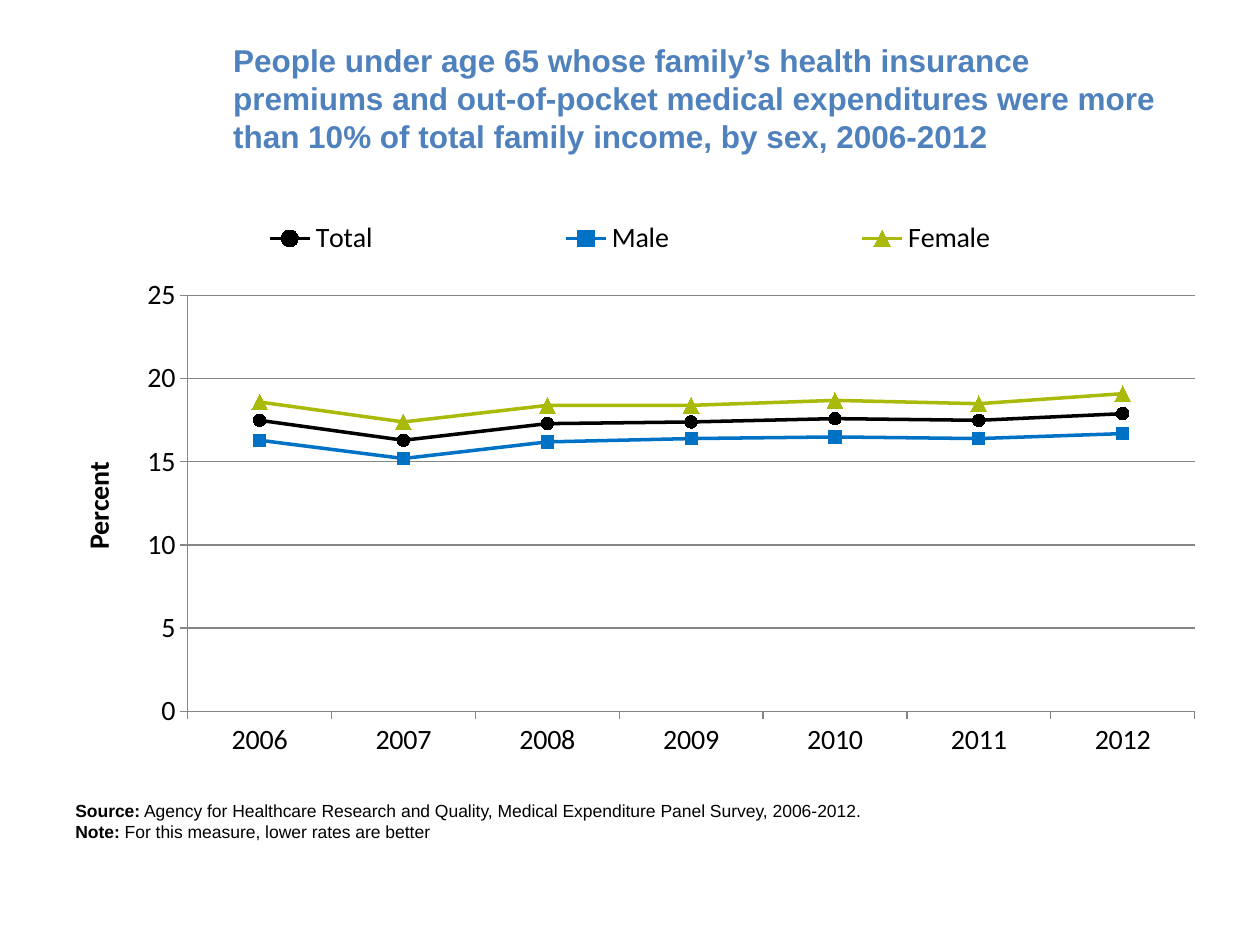
from lxml.etree import SubElement
from pptx import Presentation
from pptx.chart.data import CategoryChartData
from pptx.dml.color import RGBColor
from pptx.enum.chart import XL_CHART_TYPE, XL_LEGEND_POSITION, XL_MARKER_STYLE, XL_TICK_MARK
from pptx.enum.text import MSO_ANCHOR, PP_ALIGN
from pptx.oxml.ns import qn
from pptx.util import Pt

TITLE_BLUE = RGBColor(0x4F, 0x81, 0xBD)
BLACK = RGBColor(0, 0, 0)
BLUE = RGBColor(0x00, 0x72, 0xC6)
GREEN = RGBColor(0xAA, 0xBA, 0x0A)
GRAY = RGBColor(0x86, 0x86, 0x86)


def add_text(para, text, size=10, bold=False, color=BLACK, name="Arial"):
    span = para.add_run()
    span.text = text
    span.font.size = Pt(size)
    span.font.bold = bold
    span.font.name = name
    span.font.color.rgb = color


def place(parent, **position):
    """Give a chart part a manual layout, in fractions of the chart."""
    for old in parent.findall(qn("c:layout")):
        parent.remove(old)
    layout = SubElement(parent, qn("c:layout"))
    manual = SubElement(layout, qn("c:manualLayout"))
    for key, value in position.items():
        SubElement(manual, qn(f"c:{key}")).set("val", str(value))
    # The layout follows the first child, except in a plot area, where it leads
    parent.insert(0 if parent.tag == qn("c:plotArea") else 1, layout)


deck = Presentation()
deck.slide_width, deck.slide_height = Pt(720), Pt(540)
page = deck.slides.add_slide(deck.slide_layouts[5])

# Title
title = page.shapes.title
title.left, title.top, title.width, title.height = Pt(126), Pt(21.6), Pt(558), Pt(68.4)
title.text_frame.word_wrap = True
title.text_frame.vertical_anchor = MSO_ANCHOR.MIDDLE
para = title.text_frame.paragraphs[0]
para.alignment = PP_ALIGN.LEFT
add_text(para, "People under age 65 whose family’s health insurance premiums and "
         "out-of-pocket medical expenditures were more than 10% of total family "
         "income, by sex, 2006-2012", size=18, bold=True, color=TITLE_BLUE)

# Line chart
lines = [
    ("Total", (17.5, 16.3, 17.3, 17.4, 17.6, 17.5, 17.9), BLACK, XL_MARKER_STYLE.CIRCLE, 7),
    ("Male", (16.3, 15.2, 16.2, 16.4, 16.5, 16.4, 16.7), BLUE, XL_MARKER_STYLE.SQUARE, 7),
    ("Female", (18.6, 17.4, 18.4, 18.4, 18.7, 18.5, 19.1), GREEN, XL_MARKER_STYLE.TRIANGLE, 9),
]
data = CategoryChartData()
data.categories = [str(year) for year in range(2006, 2013)]
for name, values, *_ in lines:
    data.add_series(name, values)
chart = page.shapes.add_chart(XL_CHART_TYPE.LINE_MARKERS, Pt(36), Pt(115.2),
                              Pt(648), Pt(324), data).chart
chart.has_title = False
chart.font.size = Pt(10)
chart.font.name = "Arial"
chart.font.color.rgb = BLACK
plot = chart.plots[0]
plot.vary_by_categories = False
place(chart._chartSpace.chart.plotArea, layoutTarget="inner", xMode="edge", yMode="edge",
      x=0.11, y=0.166, w=0.888, h=0.733)

for series, (_, _, color, style, size) in zip(plot.series, lines):
    series.smooth = False
    series.format.line.color.rgb = color
    series.format.line.width = Pt(2)
    marker = series.marker
    marker.style, marker.size = style, size
    marker.format.fill.solid()
    marker.format.fill.fore_color.rgb = color
    marker.format.line.color.rgb = color

# Axes
percent_axis = chart.value_axis
for axis in (chart.category_axis, percent_axis):
    axis.major_tick_mark = XL_TICK_MARK.OUTSIDE
    axis.minor_tick_mark = XL_TICK_MARK.NONE
    axis.format.line.color.rgb = GRAY
    axis.tick_labels.font.size = Pt(16)
    axis.tick_labels.font.name = "Calibri"
percent_axis.minimum_scale, percent_axis.maximum_scale = 0, 25
percent_axis.major_unit = 5
percent_axis.tick_labels.number_format = "0"
percent_axis.tick_labels.number_format_is_linked = False
percent_axis.has_major_gridlines = True
percent_axis.major_gridlines.format.line.color.rgb = GRAY
axis_title = percent_axis.axis_title
add_text(axis_title.text_frame.paragraphs[0], "Percent", size=16, bold=True, name="Calibri")
place(axis_title._element, xMode="edge", yMode="edge", x=0.01, y=0.45)

# Legend
chart.has_legend = True
legend = chart.legend
legend.position = XL_LEGEND_POSITION.TOP
legend.include_in_layout = False
legend.font.size = Pt(16)
legend.font.name = "Calibri"
place(legend._element, xMode="edge", yMode="edge", x=0.02, y=0.02, w=0.96, h=0.09)

# Source and note
box = page.shapes.add_textbox(Pt(36), Pt(453.6), Pt(648), Pt(31.68))
box.text_frame.word_wrap = True
notes = [
    ("Source:", " Agency for Healthcare Research and Quality, "
                "Medical Expenditure Panel Survey, 2006-2012."),
    ("Note: ", "For this measure, lower rates are better"),
]
for index, (label, text) in enumerate(notes):
    para = box.text_frame.add_paragraph() if index else box.text_frame.paragraphs[0]
    add_text(para, label, bold=True)
    add_text(para, text)

deck.save("out.pptx")
